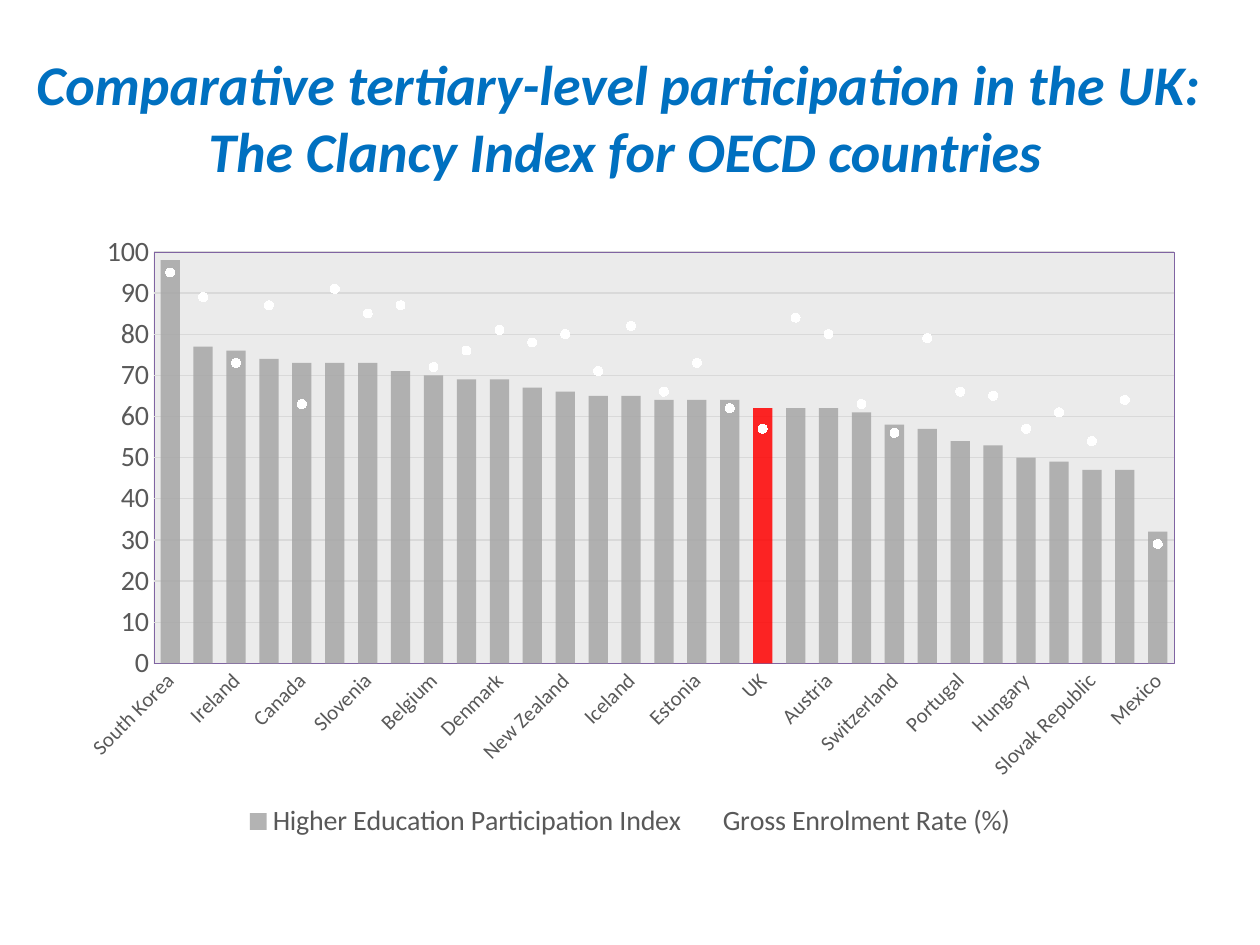
import lxml.etree
import pptx
import pptx.chart.data
import pptx.dml.color
import pptx.enum.chart
import pptx.enum.text
import pptx.oxml
import pptx.oxml.ns
import pptx.util
from pptx.util import Cm, Pt

COLORS = {
    "title": "0070C0",
    "label": "595959",
    "axis": "8064A2",
    "grid": "D9D9D9",
    "index": "A6A6A6",
    "uk": "FF0000",
    "enrolment": "FFFFFF",
}
FONT = "Calibri"
UK = "UK"

PARTICIPATION = [
    ("South Korea", 98, 95), ("United States", 77, 89), ("Ireland", 76, 73),
    ("Australia", 74, 87), ("Canada", 73, 63), ("Finland", 73, 91),
    ("Slovenia", 73, 85), ("Spain", 71, 87), ("Belgium", 70, 72),
    ("Norway", 69, 76), ("Denmark", 69, 81), ("Netherlands", 67, 78),
    ("New Zealand", 66, 80), ("Poland", 65, 71), ("Iceland", 65, 82),
    ("Israel", 64, 66), ("Estonia", 64, 73), ("France", 64, 62),
    (UK, 62, 57), ("Chile", 62, 84), ("Austria", 62, 80),
    ("Sweden", 61, 63), ("Switzerland", 58, 56), ("Turkey", 57, 79),
    ("Portugal", 54, 66), ("Czech Republic", 53, 65), ("Hungary", 50, 57),
    ("Germany", 49, 61), ("Slovak Republic", 47, 54), ("Italy", 47, 64),
    ("Mexico", 32, 29),
]


def rgb(name):
    """Return the named colour."""
    return pptx.dml.color.RGBColor.from_string(COLORS[name])


def chart_xml(tag, body):
    """Build a chart element with its namespaces."""
    spaces = pptx.oxml.ns.nsdecls("c", "a")
    return pptx.oxml.parse_xml(f"<c:{tag} {spaces}>{body}</c:{tag}>")


def style_font(font, size, color):
    """Set typeface, size and colour."""
    font.name, font.size = FONT, Pt(size)
    font.color.rgb = rgb(color)


def fill_translucent(shape_format, color, percent):
    """Fill with a colour at the given opacity."""
    shape_format.fill.solid()
    shape_format.fill.fore_color.rgb = rgb(color)
    solid = shape_format.fill._xPr.find(pptx.oxml.ns.qn("a:solidFill"))
    alpha = lxml.etree.SubElement(solid[0], pptx.oxml.ns.qn("a:alpha"))
    alpha.set("val", str(percent * 1000))


def add_title(slide, left, top, width, height):
    """Place the two-line heading."""
    frame = slide.shapes.add_textbox(left, top, width, height).text_frame
    frame.word_wrap = True
    frame.vertical_anchor = pptx.enum.text.MSO_ANCHOR.MIDDLE
    heading = frame.paragraphs[0]
    heading.text = (
        "Comparative tertiary-level participation in the UK: \v"
        "The Clancy Index for OECD countries"
    )
    heading.alignment = pptx.enum.text.PP_ALIGN.CENTER
    style_font(heading.font, 32, "title")
    heading.font.bold = heading.font.italic = True


def move_enrolment_to_line(chart):
    """Turn the second column series into a line plot on the same axes."""
    qn = pptx.oxml.ns.qn
    columns = chart.plots[0]._element
    enrolment = columns.findall(qn("c:ser"))[1]
    for column_only in enrolment.findall(qn("c:invertIfNegative")):
        enrolment.remove(column_only)
    line_plot = chart_xml(
        "lineChart",
        '<c:grouping val="standard"/><c:varyColors val="0"/><c:marker val="1"/>',
    )
    line_plot.insert(2, enrolment)
    for axis in columns.findall(qn("c:axId")):
        lxml.etree.SubElement(line_plot, qn("c:axId")).set("val", axis.get("val"))
    columns.addnext(line_plot)


def style_plot_area(chart):
    """Set the position, fill and border of the plot area."""
    area = chart.plots[0]._element.getparent()
    for layout in area.findall(pptx.oxml.ns.qn("c:layout")):
        area.remove(layout)
    box = "".join(
        f'<c:{key} val="{value}"/>'
        for key, value in (("x", 0.08), ("y", 0.05), ("w", 0.9), ("h", 0.66))
    )
    area.insert(0, chart_xml(
        "layout",
        '<c:manualLayout><c:layoutTarget val="inner"/><c:xMode val="edge"/>'
        f'<c:yMode val="edge"/>{box}</c:manualLayout>',
    ))
    area.append(chart_xml(
        "spPr",
        f'<a:solidFill><a:srgbClr val="{COLORS["grid"]}">'
        '<a:alpha val="51000"/></a:srgbClr></a:solidFill>'
        f'<a:ln w="{int(Pt(0.25))}"><a:solidFill>'
        f'<a:srgbClr val="{COLORS["axis"]}"/></a:solidFill></a:ln>',
    ))


def style_axes(chart):
    """Format the country axis and the percentage axis."""
    countries, percent = chart.category_axis, chart.value_axis
    for axis, size in ((countries, 12), (percent, 16)):
        axis.major_tick_mark = pptx.enum.chart.XL_TICK_MARK.NONE
        axis.minor_tick_mark = pptx.enum.chart.XL_TICK_MARK.NONE
        style_font(axis.tick_labels.font, size, "label")
    countries.format.line.color.rgb = rgb("axis")
    countries.format.line.width = Pt(0.25)
    text_body = countries._element.find(pptx.oxml.ns.qn("c:txPr"))
    text_body.find(pptx.oxml.ns.qn("a:bodyPr")).set("rot", str(-45 * 60000))
    percent.minimum_scale, percent.maximum_scale, percent.major_unit = 0, 100, 10
    percent.format.line.fill.background()
    percent.major_gridlines.format.line.color.rgb = rgb("grid")
    percent.major_gridlines.format.line.width = Pt(0.75)


def add_participation_chart(slide, left, top, width, height):
    """Place the columns of index values with enrolment markers."""
    countries, index_values, enrolment_rates = zip(*PARTICIPATION)
    data = pptx.chart.data.CategoryChartData()
    data.categories = countries
    data.add_series("Higher Education Participation Index", index_values)
    data.add_series("Gross Enrolment Rate (%)", enrolment_rates)
    chart = slide.shapes.add_chart(
        pptx.enum.chart.XL_CHART_TYPE.COLUMN_CLUSTERED,
        left, top, width, height, data,
    ).chart
    chart.has_title = False
    chart.font.name, chart.font.size = FONT, Pt(10)
    move_enrolment_to_line(chart)
    columns, line = chart.plots
    columns.gap_width, columns.overlap = 71, -27
    columns.vary_by_categories = False

    index = columns.series[0]
    index.invert_if_negative = False
    fill_translucent(index.format, "index", 85)
    fill_translucent(index.points[countries.index(UK)].format, "uk", 85)

    enrolment = line.series[0]
    enrolment.smooth = False
    enrolment.format.line.fill.background()
    marker = enrolment.marker
    marker.style, marker.size = pptx.enum.chart.XL_MARKER_STYLE.CIRCLE, 5
    marker.format.fill.solid()
    marker.format.fill.fore_color.rgb = rgb("enrolment")
    marker.format.line.color.rgb = rgb("enrolment")

    style_axes(chart)
    style_plot_area(chart)
    chart.has_legend = True
    chart.legend.position = pptx.enum.chart.XL_LEGEND_POSITION.BOTTOM
    chart.legend.include_in_layout = False
    style_font(chart.legend.font, 16, "label")


def main():
    """Build and save the slide."""
    deck = pptx.Presentation()
    deck.slide_width, deck.slide_height = Cm(25.4), Cm(19.05)
    slide = deck.slides.add_slide(deck.slide_layouts[6])
    add_title(slide, Cm(0.38), Cm(0.76), Cm(24.46), Cm(3.18))
    add_participation_chart(slide, Cm(1.27), Cm(4.45), Cm(22.86), Cm(12.57))
    deck.save("out.pptx")


if __name__ == "__main__":
    main()
